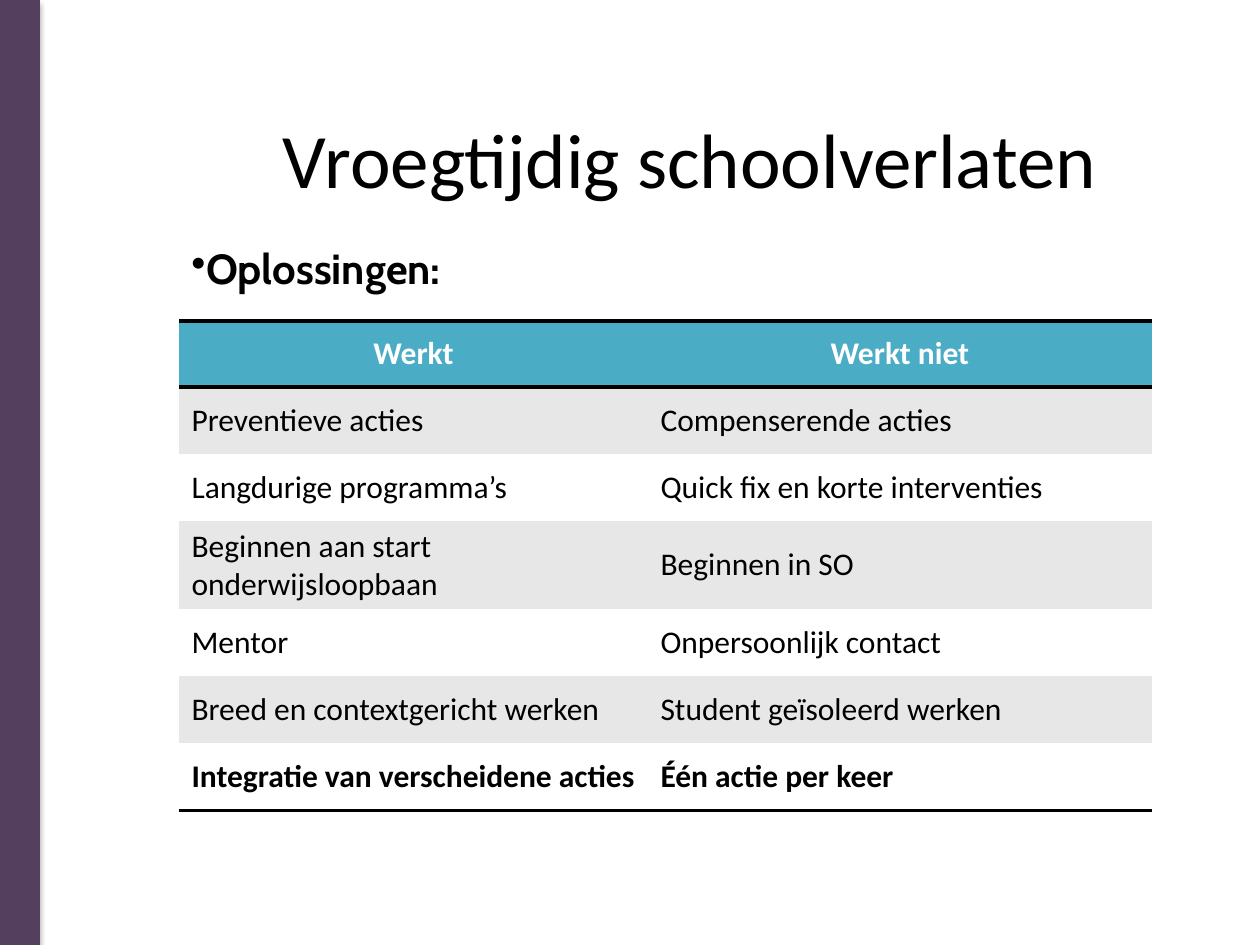
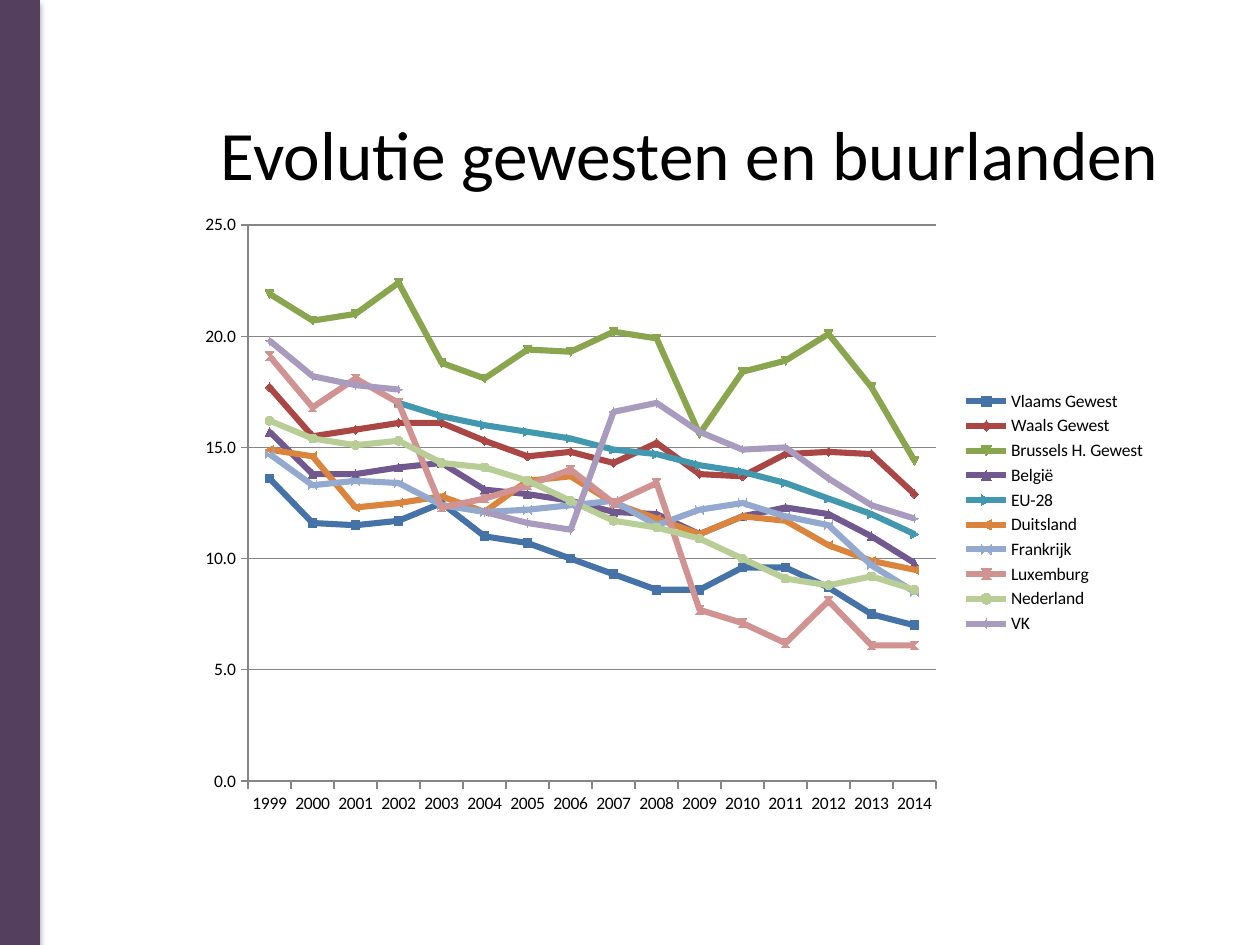
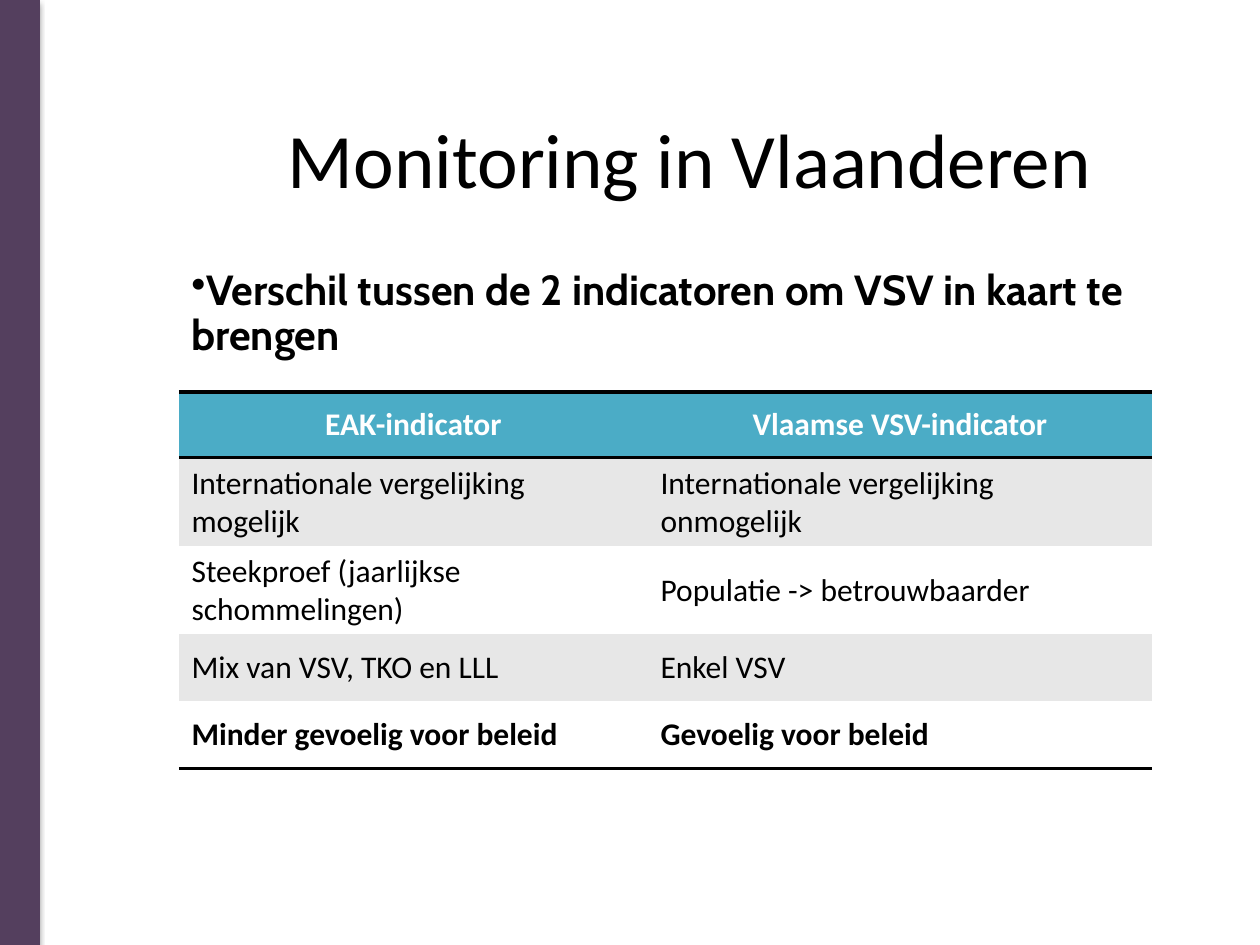
from lxml import etree
from pptx import Presentation
from pptx import util as u
from pptx.chart import data as cd
from pptx.dml.color import RGBColor
from pptx.enum import chart as ch, shapes, text
from pptx.oxml import ns

# Shared look
EMU_PER_PX = 914400 / 126
PURPLE, TEAL, GREY = "543F5E", "4BACC6", "E7E7E7"
BLACK, WHITE, AXIS_GREY = "000000", "FFFFFF", "868686"
BODY_FONT, BULLET_FONT = "Calibri", "Cabin"
LEFT = 179
COLUMNS = (469, 504)
HEADER_HEIGHT, ROW_HEIGHT = 66, 67
PLAIN_TABLE_STYLE = "{2D5ABB26-0587-4C30-8999-92F81FD0307C}"

# Content
SOLUTIONS = {
    "title": "Vroegtijdig schoolverlaten",
    "bullet": "Oplossingen:",
    "bullet_top": 242,
    "table_top": 321,
    "rows": [
        ("Werkt", "Werkt niet"),
        ("Preventieve acties", "Compenserende acties"),
        ("Langdurige programma’s", "Quick fix en korte interventies"),
        ("Beginnen aan start onderwijsloopbaan", "Beginnen in SO"),
        ("Mentor", "Onpersoonlijk contact"),
        ("Breed en contextgericht werken", "Student geïsoleerd werken"),
        ("Integratie van verscheidene acties", "Één actie per keer"),
    ],
}
MONITORING = {
    "title": "Monitoring in Vlaanderen",
    "bullet": "Verschil tussen de 2 indicatoren om VSV in kaart te brengen",
    "bullet_top": 263,
    "table_top": 392,
    "rows": [
        ("EAK-indicator", "Vlaamse VSV-indicator"),
        ("Internationale vergelijking mogelijk",
         "Internationale vergelijking onmogelijk"),
        ("Steekproef (jaarlijkse schommelingen)", "Populatie -> betrouwbaarder"),
        ("Mix van VSV, TKO en LLL", "Enkel VSV"),
        ("Minder gevoelig voor beleid", "Gevoelig voor beleid"),
    ],
}
TREND_TITLE = "Evolutie gewesten en buurlanden"
YEARS = range(1999, 2015)
TRENDS = [
    ("Vlaams Gewest", "4572A7", (13.6, 11.6, 11.5, 11.7, 12.5, 11, 10.7, 10,
                                 9.3, 8.6, 8.6, 9.6, 9.6, 8.7, 7.5, 7)),
    ("Waals Gewest", "AA4643", (17.7, 15.5, 15.8, 16.1, 16.1, 15.3, 14.6, 14.8,
                                14.3, 15.2, 13.8, 13.7, 14.7, 14.8, 14.7, 12.9)),
    ("Brussels H. Gewest", "89A54E", (21.9, 20.7, 21, 22.4, 18.8, 18.1, 19.4, 19.3,
                                      20.2, 19.9, 15.6, 18.4, 18.9, 20.1, 17.7, 14.4)),
    ("België", "71588F", (15.7, 13.8, 13.8, 14.1, 14.3, 13.1, 12.9, 12.6,
                          12.1, 12, 11.1, 11.9, 12.3, 12, 11, 9.8)),
    ("EU-28", "4198AF", (None, None, None, 17, 16.4, 16, 15.7, 15.4,
                         14.9, 14.7, 14.2, 13.9, 13.4, 12.7, 12, 11.1)),
    ("Duitsland", "DB843D", (14.9, 14.6, 12.3, 12.5, 12.8, 12.1, 13.5, 13.7,
                             12.5, 11.8, 11.1, 11.9, 11.7, 10.6, 9.9, 9.5)),
    ("Frankrijk", "93A9CF", (14.7, 13.3, 13.5, 13.4, 12.4, 12.1, 12.2, 12.4,
                             12.6, 11.5, 12.2, 12.5, 11.9, 11.5, 9.7, 8.5)),
    ("Luxemburg", "D19392", (19.1, 16.8, 18.1, 17, 12.3, 12.7, 13.3, 14,
                             12.5, 13.4, 7.7, 7.1, 6.2, 8.1, 6.1, 6.1)),
    ("Nederland", "B9CD96", (16.2, 15.4, 15.1, 15.3, 14.3, 14.1, 13.5, 12.6,
                             11.7, 11.4, 10.9, 10, 9.1, 8.8, 9.2, 8.6)),
    ("VK", "A99BBD", (19.8, 18.2, 17.8, 17.6, None, 12.1, 11.6, 11.3,
                      16.6, 17, 15.7, 14.9, 15, 13.6, 12.4, 11.8)),
]
PLOT_AREA = {"x": 0.06, "y": 0.04, "w": 0.71, "h": 0.89}


# Helpers
def px(n):
    return u.Emu(round(n * EMU_PER_PX))


def box(*lengths):
    return [px(n) for n in lengths]


def rgb(value):
    return RGBColor.from_string(value)


def sub(parent, tag, **attrs):
    el = etree.SubElement(parent, ns.qn(tag))
    for name, value in attrs.items():
        el.set(name, str(value))
    return el


def style_font(font, size, color=BLACK, bold=False, name=BODY_FONT):
    font.name, font.size, font.bold = name, u.Pt(size), bold
    font.color.rgb = rgb(color)


def add_run(p, words, size, **style):
    r = p.add_run()
    r.text = words
    style_font(r.font, size, **style)


def set_line(line, color, width):
    line.color.rgb = rgb(color)
    line.width = u.Pt(width)


# Parts of a slide
def add_band(s):
    band = s.shapes.add_shape(shapes.MSO_SHAPE.RECTANGLE, *box(0, 0, 39, 945))
    band.fill.solid()
    band.fill.fore_color.rgb = rgb(PURPLE)
    set_line(band.line, PURPLE, 0.75)
    band.shadow.inherit = False
    effects = band._element.spPr.find(ns.qn("a:effectLst"))
    shadow = sub(effects, "a:outerShdw", blurRad=u.Pt(3.1), dist=u.Pt(1.8),
                 dir=5400000, rotWithShape=0)
    sub(sub(shadow, "a:srgbClr", val=BLACK), "a:alpha", val=35000)


def add_slide(prs, title, size=44):
    s = prs.slides.add_slide(prs.slide_layouts[5])
    add_band(s)
    sp = s.shapes.title
    sp.left, sp.top, sp.width, sp.height = box(LEFT, 105, 1022, 154)
    tf = sp.text_frame
    tf.auto_size = text.MSO_AUTO_SIZE.NONE
    tf.vertical_anchor = text.MSO_ANCHOR.TOP
    p = tf.paragraphs[0]
    p.alignment = text.PP_ALIGN.CENTER
    add_run(p, title, size)
    return s


def add_bullet(s, words, top):
    tf = s.shapes.add_textbox(*box(LEFT, top, 1022, 507)).text_frame
    tf.word_wrap = True
    p = tf.paragraphs[0]
    pPr = p._p.get_or_add_pPr()
    pPr.set("marL", "0")
    pPr.set("indent", "0")
    sub(pPr, "a:buChar", char="•")
    p.line_spacing = 0.9
    add_run(p, words, 24, bold=True, name=BULLET_FONT)


def add_borders(cell, sides):
    tcPr = cell._tc.get_or_add_tcPr()
    for i, side in enumerate(sides):
        ln = sub(tcPr, "a:ln" + side, w=u.Pt(2))
        sub(sub(ln, "a:solidFill"), "a:srgbClr", val=BLACK)
        tcPr.insert(i, ln)


def add_comparison(s, rows, top):
    height = HEADER_HEIGHT + ROW_HEIGHT * (len(rows) - 1)
    table = s.shapes.add_table(len(rows), len(COLUMNS),
                               *box(LEFT, top, sum(COLUMNS), height)).table
    table._tbl.tblPr.find(ns.qn("a:tableStyleId")).text = PLAIN_TABLE_STYLE
    for column, width in zip(table.columns, COLUMNS):
        column.width = px(width)
    last = len(rows) - 1
    for i, row in enumerate(rows):
        header = i == 0
        table.rows[i].height = px(HEADER_HEIGHT if header else ROW_HEIGHT)
        for j, words in enumerate(row):
            cell = table.cell(i, j)
            cell.vertical_anchor = text.MSO_ANCHOR.MIDDLE
            cell.fill.solid()
            cell.fill.fore_color.rgb = rgb(TEAL if header else GREY if i % 2 else WHITE)
            add_borders(cell, "TB" if header else "B" if i == last else "")
            p = cell.text_frame.paragraphs[0]
            if header:
                p.alignment = text.PP_ALIGN.CENTER
            add_run(p, words, 18, color=WHITE if header else BLACK,
                    bold=i in (0, last))


def place_plot(chart):
    plot_area = chart._chartSpace.chart.plotArea
    layout = plot_area.find(ns.qn("c:layout"))
    if layout is None:
        layout = sub(plot_area, "c:layout")
        plot_area.insert(0, layout)
    manual = sub(layout, "c:manualLayout")
    sub(manual, "c:layoutTarget", val="inner")
    for key in "xy":
        sub(manual, f"c:{key}Mode", val="edge")
    for key, share in PLOT_AREA.items():
        sub(manual, f"c:{key}", val=share)


def add_trends(s):
    data = cd.CategoryChartData(number_format="0.0")
    data.categories = [str(year) for year in YEARS]
    for name, _, values in TRENDS:
        data.add_series(name, values)
    chart = s.shapes.add_chart(ch.XL_CHART_TYPE.LINE_MARKERS,
                               *box(190, 200, 969, 625), data).chart
    chart.has_title = False
    style_font(chart.font, 10)
    chart.has_legend = True
    chart.legend.position = ch.XL_LEGEND_POSITION.RIGHT
    chart.legend.include_in_layout = False
    place_plot(chart)

    # Axes
    years, share = chart.category_axis, chart.value_axis
    for axis in (years, share):
        axis.major_tick_mark = ch.XL_TICK_MARK.OUTSIDE
        axis.minor_tick_mark = ch.XL_TICK_MARK.NONE
        set_line(axis.format.line, AXIS_GREY, 0.75)
    share.minimum_scale, share.maximum_scale, share.major_unit = 0, 25, 5
    share.tick_labels.number_format = "0.0"
    share.tick_labels.number_format_is_linked = False
    share.has_major_gridlines = True
    set_line(share.major_gridlines.format.line, AXIS_GREY, 0.75)

    # Lines and markers
    plot = chart.plots[0]
    plot.vary_by_categories = False
    for series, (_, color, _) in zip(plot.series, TRENDS):
        series.smooth = False
        set_line(series.format.line, color, 3.5)
        series.marker.format.fill.solid()
        series.marker.format.fill.fore_color.rgb = rgb(color)
        set_line(series.marker.format.line, color, 0.75)


def add_comparison_slide(prs, content):
    s = add_slide(prs, content["title"])
    add_bullet(s, content["bullet"], content["bullet_top"])
    add_comparison(s, content["rows"], content["table_top"])


def main():
    prs = Presentation()
    prs.slide_width, prs.slide_height = box(1260, 945)
    add_comparison_slide(prs, SOLUTIONS)
    add_trends(add_slide(prs, TREND_TITLE, 39.6))
    add_comparison_slide(prs, MONITORING)
    prs.save("out.pptx")


if __name__ == "__main__":
    main()
